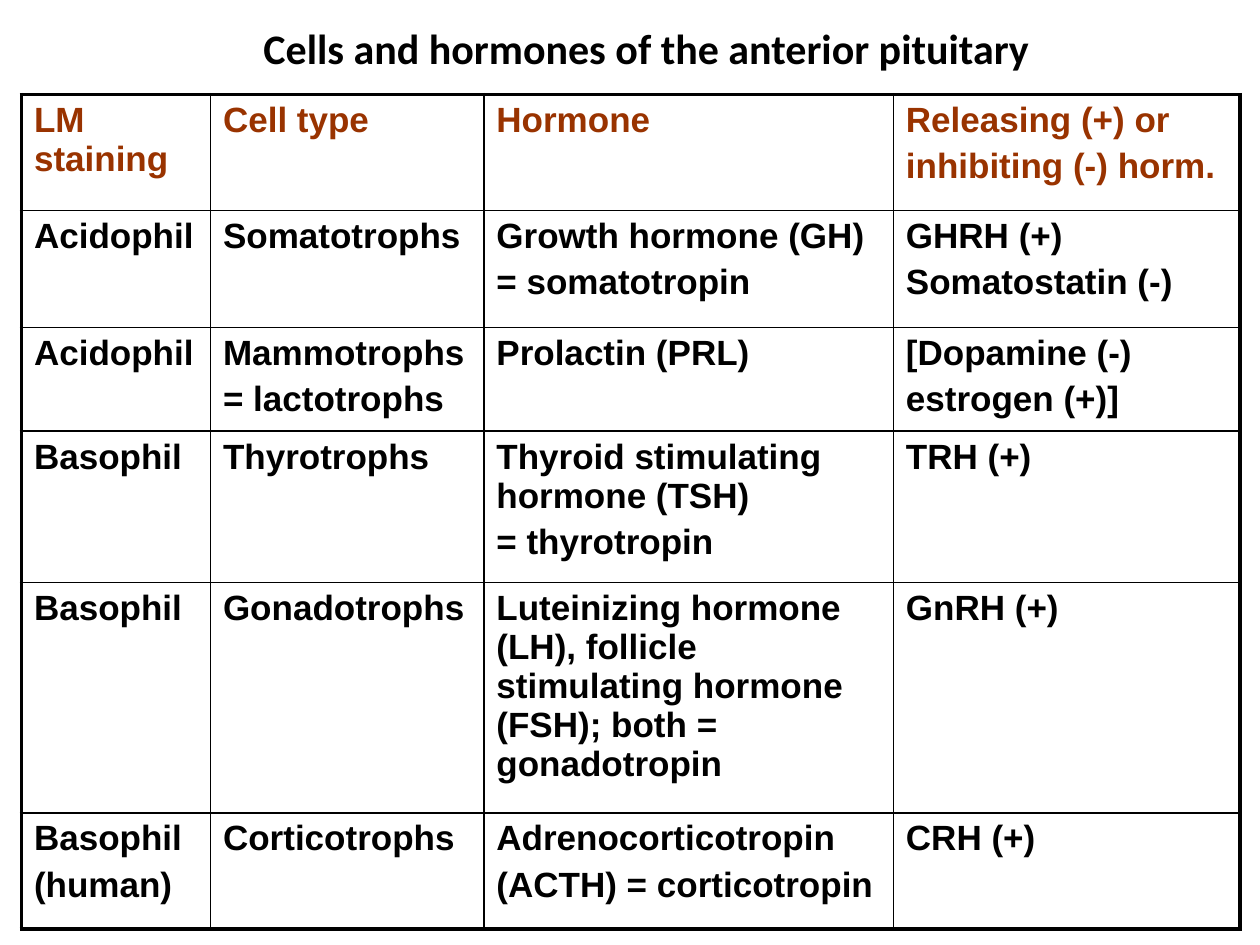
from dataclasses import dataclass

from lxml import etree
from pptx import Presentation
from pptx import util as u
from pptx.dml.color import RGBColor
from pptx.enum import text
from pptx.oxml.ns import qn

COLORS = {"ink": "000000", "header": "993300"}
COL_WIDTHS = [1.5, 2.17, 3.25, 2.75]
OUTER, INNER = 2.25, 1


@dataclass
class Row:
    height: float
    cells: list[str]
    color: str = "ink"


ROWS = [
    Row(0.92, ["LM staining", "Cell type", "Hormone",
               "Releasing (+) or\ninhibiting (-) horm."], "header"),
    Row(0.93, ["Acidophil", "Somatotrophs", "Growth hormone (GH)\n= somatotropin",
               "GHRH (+)\nSomatostatin (-)"]),
    Row(0.78, ["Acidophil", "Mammotrophs\n= lactotrophs", "Prolactin (PRL)",
               "[Dopamine (-)\nestrogen (+)]"]),
    Row(1.2, ["Basophil", "Thyrotrophs",
              "Thyroid stimulating hormone (TSH)\n= thyrotropin", "TRH (+)"]),
    Row(1.83, ["Basophil", "Gonadotrophs",
               "Luteinizing hormone (LH), follicle stimulating hormone (FSH); "
               "both = gonadotropin", "GnRH (+)"]),
    Row(0.92, ["Basophil\n(human)", "Corticotrophs",
               "Adrenocorticotropin\n(ACTH) = corticotropin", "CRH (+)"]),
]


def add_run(p, content: str, size: float, font: str, color: str) -> None:
    """Add one bold run to a paragraph."""
    r = p.add_run()
    r.text = content
    r.font.size, r.font.name, r.font.bold = u.Pt(size), font, True
    r.font.color.rgb = RGBColor.from_string(COLORS[color])


def set_borders(cell, widths: dict[str, float]) -> None:
    """Draw solid cell borders, with widths in points by side."""
    tc_pr = cell._tc.get_or_add_tcPr()
    for side, width in widths.items():
        ln = etree.SubElement(tc_pr, qn(f"a:ln{side}"), w=str(u.Pt(width)))
        fill = etree.SubElement(ln, qn("a:solidFill"))
        etree.SubElement(fill, qn("a:srgbClr"), val=COLORS["ink"])


def add_title(s, content: str) -> None:
    """Add the centred slide title."""
    sp = s.shapes.add_textbox(u.Inches(0.92), 0, u.Inches(8.42), u.Inches(0.75))
    tf = sp.text_frame
    tf.word_wrap = True
    tf.vertical_anchor = text.MSO_ANCHOR.MIDDLE
    p = tf.paragraphs[0]
    p.alignment = text.PP_ALIGN.CENTER
    add_run(p, content, 24, "Calibri", "ink")


def fill_cell(cell, content: str, color: str) -> None:
    """Write one paragraph per line of content into a cell."""
    tf = cell.text_frame
    for i, line in enumerate(content.split("\n")):
        p = tf.add_paragraph() if i else tf.paragraphs[0]
        if i:
            p.space_before = u.Pt(4)
        add_run(p, line, 20, "Arial", color)


def add_hormone_table(s, rows: list[Row]) -> None:
    """Add the table of cells and hormones."""
    last_row, last_col = len(rows) - 1, len(COL_WIDTHS) - 1
    table = s.shapes.add_table(
        len(rows), len(COL_WIDTHS), u.Inches(0.17), u.Inches(0.75),
        u.Inches(sum(COL_WIDTHS)), u.Inches(sum(row.height for row in rows))).table
    table.first_row = table.horz_banding = False
    for column, width in zip(table.columns, COL_WIDTHS):
        column.width = u.Inches(width)
    for i, row in enumerate(rows):
        table.rows[i].height = u.Inches(row.height)
        for j, content in enumerate(row.cells):
            cell = table.cell(i, j)
            fill_cell(cell, content, row.color)
            edges = {"L": j == 0, "R": j == last_col, "T": i == 0, "B": i == last_row}
            set_borders(cell, {side: OUTER if outer else INNER
                               for side, outer in edges.items()})
            cell.fill.background()


def main() -> None:
    """Build and save the slide."""
    prs = Presentation()
    prs.slide_width, prs.slide_height = u.Inches(10), u.Inches(7.5)
    s = prs.slides.add_slide(prs.slide_layouts[6])
    add_title(s, "Cells and hormones of the anterior pituitary")
    add_hormone_table(s, ROWS)
    prs.save("out.pptx")


if __name__ == "__main__":
    main()
